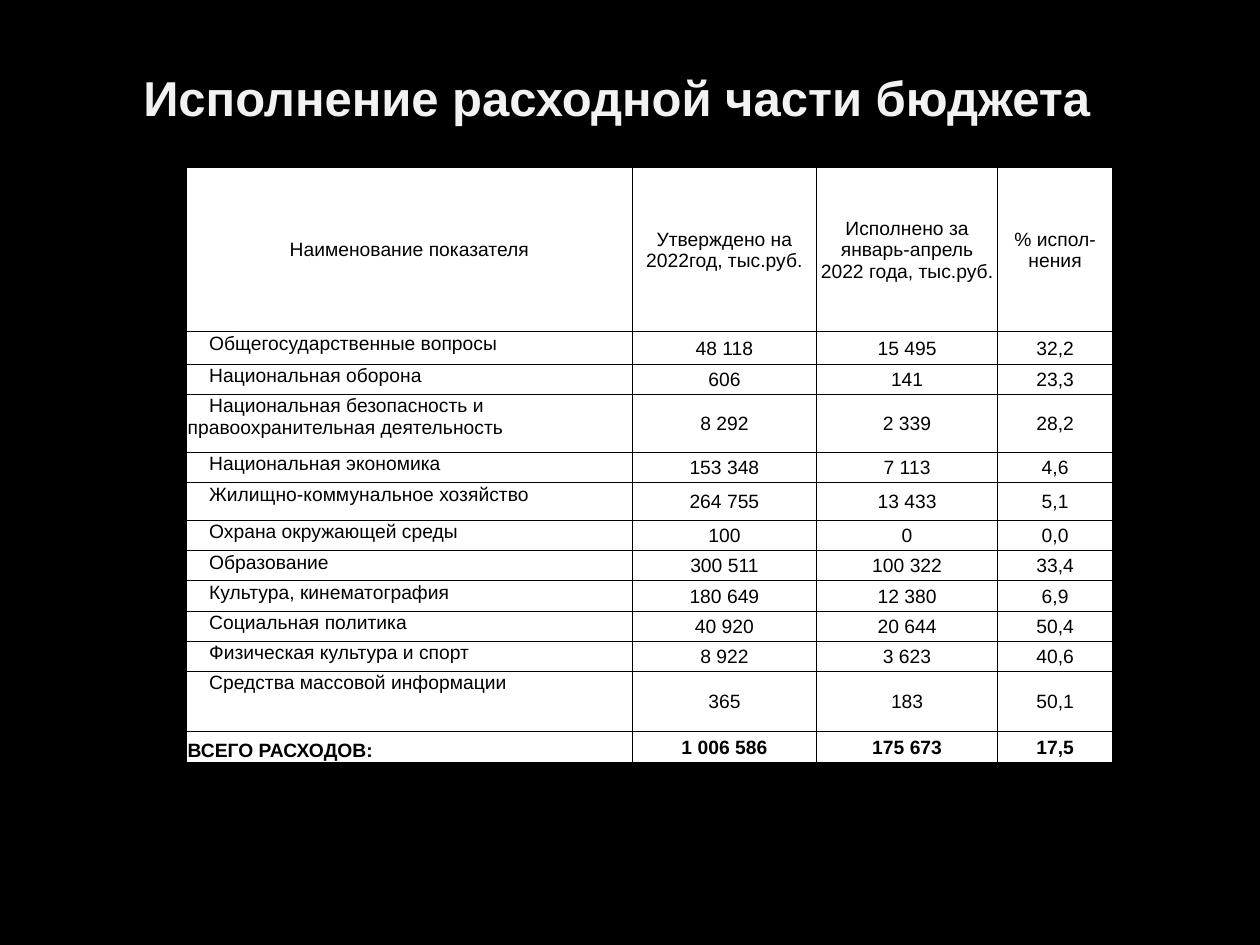
from typing import NamedTuple

from lxml import etree
from pptx import Presentation
from pptx.dml.color import RGBColor
from pptx.enum.text import MSO_ANCHOR, PP_ALIGN
from pptx.oxml.ns import qn
from pptx.util import Inches, Pt

LEFT, CENTER = PP_ALIGN.LEFT, PP_ALIGN.CENTER
TOP, MIDDLE, BOTTOM = MSO_ANCHOR.TOP, MSO_ANCHOR.MIDDLE, MSO_ANCHOR.BOTTOM
FONT = "Arial"
BLACK, WHITE, PALE = "000000", "FFFFFF", "F2F2F2"
WIDTHS = (3.54, 1.46, 1.44, 0.91)
INSET = 0.01
INDENT = 0.17


class Row(NamedTuple):
    name: str
    plan: str
    fact: str
    rate: str
    height: float = 0.24


HEAD = Row("Наименование показателя", "Утверждено на 2022год, тыс.руб.",
           "Исполнено за январь-апрель 2022 года, тыс.руб.", "% испол-нения", 1.3)
ITEMS = (
    Row("Общегосударственные вопросы", "48 118", "15 495", "32,2", 0.26),
    Row("Национальная оборона", "606", "141", "23,3"),
    Row("Национальная безопасность и правоохранительная деятельность",
        "8 292", "2 339", "28,2", 0.46),
    Row("Национальная экономика", "153 348", "7 113", "4,6"),
    Row("Жилищно-коммунальное хозяйство", "264 755", "13 433", "5,1", 0.3),
    Row("Охрана окружающей среды", "100", "0", "0,0"),
    Row("Образование", "300 511", "100 322", "33,4"),
    Row("Культура, кинематография", "180 649", "12 380", "6,9"),
    Row("Социальная политика", "40 920", "20 644", "50,4"),
    Row("Физическая культура и спорт", "8 922", "3 623", "40,6"),
    Row("Средства массовой информации", "365", "183", "50,1", 0.48),
)
TOTAL = Row("ВСЕГО РАСХОДОВ:", "1 006 586", "175 673", "17,5")


def color(code: str) -> RGBColor:
    return RGBColor.from_string(code)


def style(par, size: float, code: str, bold: bool, align) -> None:
    par.alignment = align
    font = par.font
    font.name, font.size, font.bold = FONT, Pt(size), bold
    font.color.rgb = color(code)


def border(cell) -> None:
    """Put a thin black line on all four sides, ahead of the cell's fill."""
    props = cell._tc.get_or_add_tcPr()
    for place, side in enumerate(("a:lnL", "a:lnR", "a:lnT", "a:lnB")):
        line = etree.Element(qn(side), w=str(Pt(0.5)))
        fill = etree.SubElement(line, qn("a:solidFill"))
        etree.SubElement(fill, qn("a:srgbClr"), val=BLACK)
        props.insert(place, line)


def put(cell, text: str, bold: bool, align, anchor) -> None:
    cell.margin_left = cell.margin_right = cell.margin_top = Inches(INSET)
    cell.margin_bottom = 0
    cell.vertical_anchor = anchor
    cell.fill.solid()
    cell.fill.fore_color.rgb = color(WHITE)
    cell.text = text
    style(cell.text_frame.paragraphs[0], 11, BLACK, bold, align)
    border(cell)


def add_title(slide, text: str) -> None:
    box = slide.shapes.add_textbox(Inches(0.5), Inches(0.29), Inches(9), Inches(0.96))
    frame = box.text_frame
    frame.word_wrap = True
    frame.vertical_anchor = MIDDLE
    frame.margin_right = Inches(0.31)
    frame.text = text
    style(frame.paragraphs[0], 28, PALE, True, CENTER)


def add_budget(slide) -> None:
    rows = (HEAD, *ITEMS, TOTAL)
    high = sum(row.height for row in rows)
    table = slide.shapes.add_table(
        len(rows), len(WIDTHS), Inches(1.48), Inches(1.33),
        Inches(sum(WIDTHS)), Inches(high)).table
    table.first_row = table.horz_banding = False
    for col, width in zip(table.columns, WIDTHS):
        col.width = Inches(width)
    for r, row in enumerate(rows):
        table.rows[r].height = Inches(row.height)
        bold = row is TOTAL
        name = table.cell(r, 0)
        if row is HEAD:
            put(name, row.name, bold, CENTER, MIDDLE)
        elif row is TOTAL:
            put(name, row.name, bold, LEFT, BOTTOM)
        else:
            put(name, row.name, bold, LEFT, TOP)
            props = name.text_frame.paragraphs[0]._p.get_or_add_pPr()
            props.set("indent", str(Inches(INDENT)))
        for c, text in enumerate((row.plan, row.fact, row.rate), 1):
            put(table.cell(r, c), text, bold, CENTER, MIDDLE)


def main() -> None:
    deck = Presentation()
    deck.slide_width, deck.slide_height = Inches(10), Inches(7.5)
    slide = deck.slides.add_slide(deck.slide_layouts[6])
    back = slide.background.fill
    back.solid()
    back.fore_color.rgb = color(BLACK)
    add_title(slide, "Исполнение расходной части бюджета")
    add_budget(slide)
    deck.save("out.pptx")


if __name__ == "__main__":
    main()
